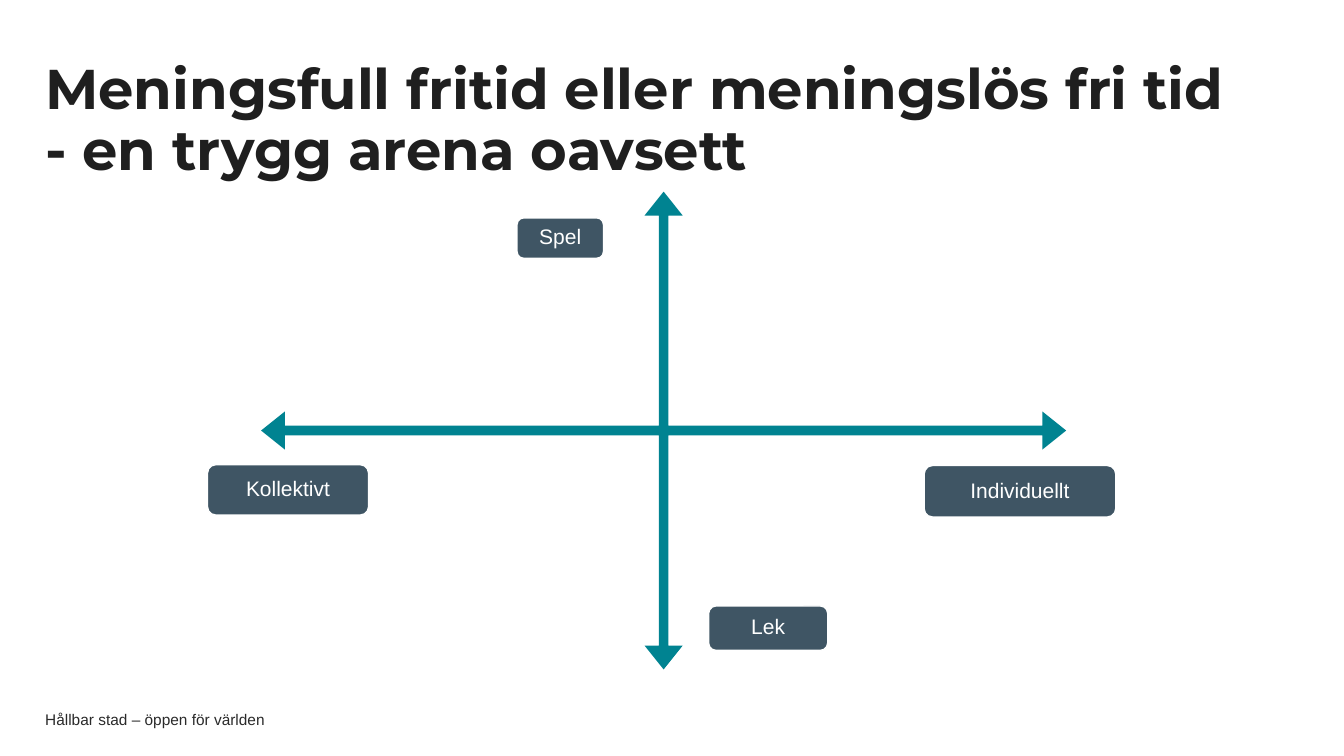
import pptx
import pptx.util
import pptx.dml.color
import pptx.enum.shapes
import pptx.enum.text

Cm, Pt = pptx.util.Cm, pptx.util.Pt
Shape = pptx.enum.shapes.MSO_SHAPE
Align = pptx.enum.text.PP_ALIGN
Anchor = pptx.enum.text.MSO_ANCHOR

HUES = {"teal": "008391", "slate": "3F5564", "white": "FFFFFF",
        "title": "1F1F1F", "foot": "2A2A2A"}


def hue(name):
    """Return the named colour."""
    return pptx.dml.color.RGBColor.from_string(HUES[name])


def write(frame, lines, size, font, tint, align=Align.LEFT, bold=False,
          pad=(0, 0), space=1.0):
    """Fill a text frame with one paragraph of one or more lines."""
    frame.word_wrap = True
    frame.auto_size = pptx.enum.text.MSO_AUTO_SIZE.NONE
    frame.vertical_anchor = Anchor.MIDDLE
    frame.margin_left = frame.margin_right = Cm(pad[0])
    frame.margin_top = frame.margin_bottom = Cm(pad[1])
    para = frame.paragraphs[0]
    para.alignment = align
    para.line_spacing = space
    for i, line in enumerate(lines):
        if i:
            para.add_line_break()
        run = para.add_run()
        run.text = line
        run.font.size = Pt(size)
        run.font.name = font
        run.font.bold = bold
        run.font.color.rgb = hue(tint)


def draw(slide, kind, box, fill, rim=None):
    """Add a flat filled shape with an optional rim."""
    shape = slide.shapes.add_shape(kind, *map(Cm, box))
    shape.shadow.inherit = False
    shape.fill.solid()
    shape.fill.fore_color.rgb = hue(fill)
    if rim:
        shape.line.color.rgb = hue(rim)
        shape.line.width = Pt(1)
    else:
        shape.line.fill.background()
    return shape


def head(slide, box):
    """Place and format the title."""
    title = slide.shapes.title
    title.left, title.top, title.width, title.height = map(Cm, box)
    lines = ["Meningsfull fritid eller meningslös fri tid ",
             "- en trygg arena oavsett"]
    write(title.text_frame, lines, 40, "Montserrat", "title", bold=True,
          pad=(0, 0.13), space=0.9)


def cross(slide, box):
    """Draw the two axes and the labels at their ends."""
    arrow = draw(slide, Shape.QUAD_ARROW, box, "teal")
    for i, part in enumerate((0.02, 0.04, 0.05)):
        arrow.adjustments[i] = part
    labels = [("Kollektivt", -1.35, 6.88, 4.06, 1.27),
              ("Individuellt", 16.71, 6.9, 4.83, 1.3),
              ("Lek", 11.28, 10.44, 3, 1.12),
              ("Spel", 6.45, 0.66, 2.18, 1.02)]
    for text, x, y, wide, high in labels:
        place = (box[0] + x, box[1] + y, wide, high)
        label = draw(slide, Shape.ROUNDED_RECTANGLE, place, "slate", "white")
        write(label.text_frame, [text], 15, "Arial", "white",
              align=Align.CENTER, pad=(0.15, 0.15), space=0.9)


def foot(slide, box):
    """Place the footer line."""
    note = slide.shapes.add_textbox(*map(Cm, box))
    write(note.text_frame, ["Hållbar stad – öppen för världen"], 11,
          "Arial", "foot")


def main():
    """Build and save the slide."""
    deck = pptx.Presentation()
    deck.slide_width, deck.slide_height = Cm(33.87), Cm(19.05)
    slide = deck.slides.add_slide(deck.slide_layouts[5])
    head(slide, (1.14, 0.51, 31.27, 5.13))
    cross(slide, (6.58, 4.83, 20.29, 12.04))
    foot(slide, (1.14, 17.93, 24, 0.41))
    deck.save("out.pptx")


if __name__ == "__main__":
    main()
